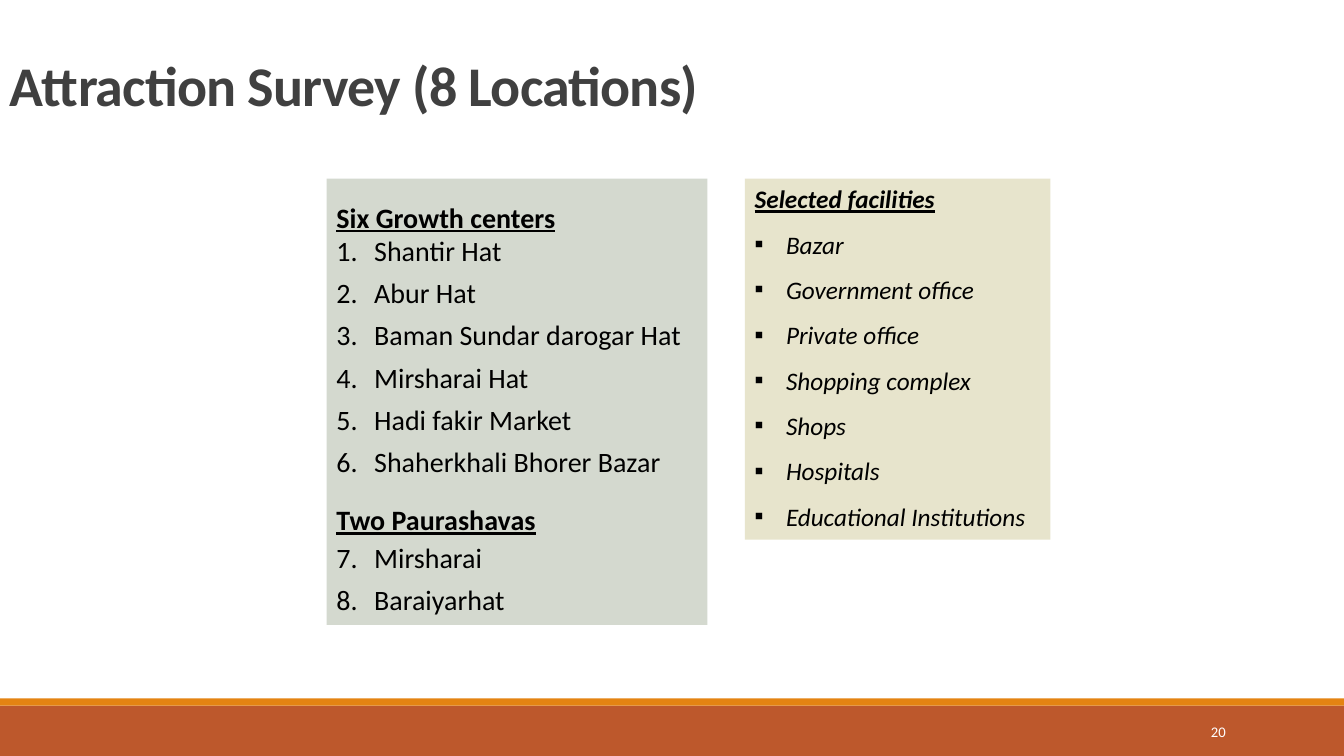
from lxml.etree import SubElement
from pptx import Presentation
from pptx.dml.color import RGBColor
from pptx.enum.shapes import MSO_SHAPE as Preset
from pptx.enum.text import MSO_ANCHOR as Anchor, PP_ALIGN as Align
from pptx.oxml.ns import qn
from pptx.util import Cm, Pt

COLORS = {
    "footer": "BD582C",
    "stripe": "E48312",
    "title": "404040",
    "centers": "D4D9CF",
    "facilities": "E7E4CC",
    "text": "000000",
    "number": "FFFFFF",
}
GROWTH_CENTERS = [
    "Shantir Hat", "Abur Hat", "Baman Sundar darogar Hat",
    "Mirsharai Hat", "Hadi fakir Market", "Shaherkhali Bhorer Bazar",
]
PAURASHAVAS = ["Mirsharai", "Baraiyarhat"]
FACILITIES = [
    "Bazar", "Government office", "Private office", "Shopping complex",
    "Shops", "Hospitals", "Educational Institutions",
]


def color(name):
    return RGBColor.from_string(COLORS[name])


def add_panel(page, fill, left, top, width, height):
    panel = page.shapes.add_shape(
        Preset.RECTANGLE, Cm(left), Cm(top), Cm(width), Cm(height))
    panel.shadow.inherit = False
    panel.fill.solid()
    panel.fill.fore_color.rgb = color(fill)
    panel.line.fill.background()
    panel.text_frame.word_wrap = True
    panel.text_frame.vertical_anchor = Anchor.TOP
    return panel.text_frame


def add_label(page, text, place, size, ink, anchor, align, bold=False):
    box = page.shapes.add_textbox(*(Cm(length) for length in place))
    frame = box.text_frame
    frame.word_wrap = True
    frame.vertical_anchor = anchor
    frame.text = text
    para = frame.paragraphs[0]
    para.alignment = align
    return para, format_span(para, size, ink, bold=bold)


def format_span(para, size, ink="text", bold=False, italic=False, underline=False):
    span = para.runs[0]
    span.font.name = "Calibri"
    span.font.size = Pt(size)
    span.font.color.rgb = color(ink)
    span.font.bold = bold
    span.font.italic = italic
    span.font.underline = underline
    return span


def add_para(frame, text, size, align, heading=False, italic=False, spacing=1.0, after=0):
    first = frame.paragraphs[0]
    para = frame.add_paragraph() if first.runs else first
    para.text = text
    para.alignment = align
    para.line_spacing = spacing
    para.space_after = Pt(after)
    format_span(para, size, bold=heading, italic=italic, underline=heading)
    return para


def add_marker(para, indent, tag, **attributes):
    properties = para._p.get_or_add_pPr()
    properties.set("marL", str(Cm(indent)))
    properties.set("indent", str(-Cm(indent)))
    SubElement(properties, qn("a:buFont"), typeface="Calibri")
    SubElement(properties, qn(tag), **attributes)


def add_numbered(frame, items, start):
    for item in items:
        para = add_para(frame, item, 20, Align.JUSTIFY, after=6)
        add_marker(para, 0.95, "a:buAutoNum", type="arabicPeriod", startAt=str(start))


def add_bulleted(frame, items):
    for item in items:
        para = add_para(frame, item, 18, Align.LEFT, italic=True, spacing=1.5)
        add_marker(para, 0.79, "a:buChar", char="▪")


def main():
    deck = Presentation()
    deck.slide_width, deck.slide_height = Cm(33.87), Cm(19.05)
    page = deck.slides.add_slide(deck.slide_layouts[6])

    add_panel(page, "footer", 0, 17.78, 33.87, 1.27)
    add_panel(page, "stripe", 0, 17.6, 33.87, 0.18)

    para, span = add_label(page, "Attraction Survey (8 Locations)", (0, 0, 18.34, 3.1),
                           40, "title", Anchor.BOTTOM, Align.LEFT, bold=True)
    para.line_spacing = 0.85
    span.font._element.set("spc", "-50")

    facilities = add_panel(page, "facilities", 18.77, 4.5, 7.7, 9.1)
    add_para(facilities, "Selected facilities", 18, Align.LEFT, heading=True, italic=True)
    add_bulleted(facilities, FACILITIES)

    centers = add_panel(page, "centers", 8.23, 4.5, 9.6, 11.25)
    add_para(centers, "Six Growth centers", 20, Align.LEFT, heading=True, spacing=1.5)
    add_numbered(centers, GROWTH_CENTERS, 1)
    add_para(centers, "Two Paurashavas", 20, Align.JUSTIFY, heading=True, spacing=1.5, after=3)
    add_numbered(centers, PAURASHAVAS, len(GROWTH_CENTERS) + 1)

    add_label(page, "20", (27.51, 17.93, 3.63, 1.02), 10.5, "number",
              Anchor.MIDDLE, Align.RIGHT)
    deck.save("out.pptx")


if __name__ == "__main__":
    main()
